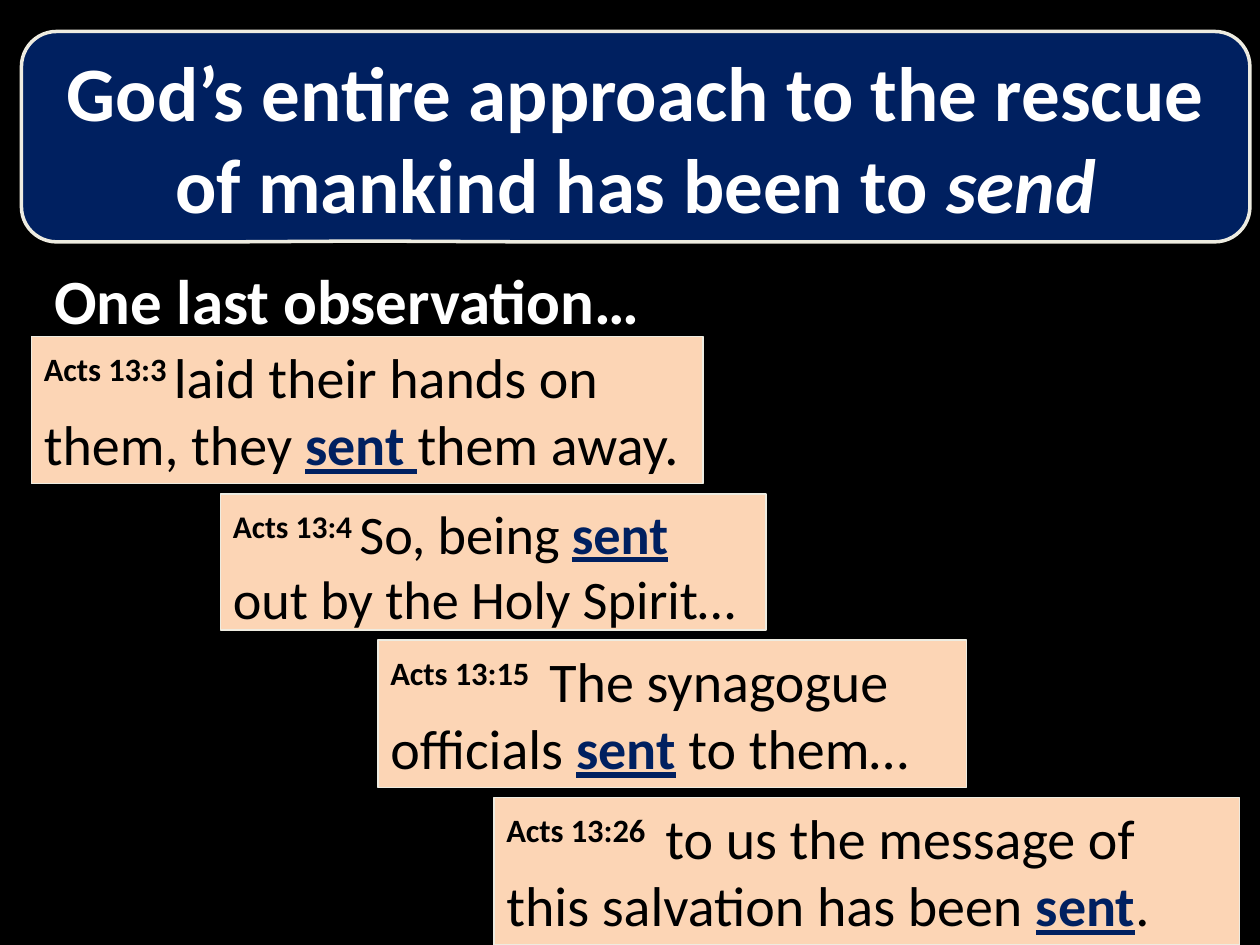
from pptx import Presentation
from pptx.dml.color import RGBColor
from pptx.enum.shapes import MSO_SHAPE as Shape
from pptx.enum.text import MSO_ANCHOR as Anchor, PP_ALIGN as Align
from pptx.util import Inches, Pt

WHITE, BLACK, NAVY = "FFFFFF", "000000", "002060"
PEACH, CREAM = "FCD5B5", "EEECE1"

# Left, top, width, height, text size, reference, words before, sent, words after
VERSES = [
    (3.92, 6.33, 5.92, 1.17, 32, "Acts 13:26 ",
     " to us the message of this salvation has been ", "sent", ". "),
    (0.25, 2.67, 5.33, 1.17, 32, "Acts 13:3 ",
     "laid their hands on them, they ", "sent ", "them away."),
    (1.75, 3.92, 4.33, 1.08, 31, "Acts 13:4 ",
     "So, being ", "sent", " out by the Holy Spirit…"),
    (3, 5.08, 4.67, 1.17, 32, "Acts 13:15 ",
     " The synagogue officials ", "sent", " to them… "),
]


def color(value):
    return RGBColor.from_string(value)


def add_box(page, kind, left, top, width, height, fill=None, line_width=None):
    box = page.shapes.add_shape(
        kind, Inches(left), Inches(top), Inches(width), Inches(height))
    box.shadow.inherit = False
    if fill:
        box.fill.solid()
        box.fill.fore_color.rgb = color(fill)
    else:
        box.fill.background()
    if line_width:
        box.line.color.rgb = color(CREAM)
        box.line.width = Pt(line_width)
    else:
        box.line.fill.background()
    box.text_frame.word_wrap = True
    return box


def add_span(para, text, size, text_color, bold=False):
    span = para.add_run()
    span.text = text
    span.font.name = "Calibri"
    span.font.size = Pt(size)
    span.font.bold = bold
    span.font.color.rgb = color(text_color)
    return span


def add_callout(page, left, top, width, height, text, size, **style):
    box = add_box(page, Shape.ROUNDED_RECTANGULAR_CALLOUT,
                  left, top, width, height, **style)
    for index, value in enumerate((-0.219, 0.496, 0.167)):
        box.adjustments[index] = value
    box.text_frame.vertical_anchor = Anchor.MIDDLE
    para = box.text_frame.paragraphs[0]
    para.alignment = Align.CENTER
    add_span(para, text, size, WHITE, bold=True)
    return para


def add_verse(page, left, top, width, height, size, reference, before, sent, after):
    box = add_box(page, Shape.RECTANGLE, left, top, width, height, PEACH, 0.75)
    box.text_frame.vertical_anchor = Anchor.TOP
    para = box.text_frame.paragraphs[0]
    para.alignment = Align.LEFT
    raised = add_span(para, reference, size, BLACK, bold=True)
    raised.font._element.set("baseline", "30000")
    add_span(para, before, size, BLACK)
    add_span(para, sent, size, NAVY, bold=True).font.underline = True
    add_span(para, after, size, BLACK)


def main():
    deck = Presentation()
    deck.slide_width, deck.slide_height = Inches(10), Inches(7.5)
    page = deck.slides.add_slide(deck.slide_layouts[6])
    page.background.fill.solid()
    page.background.fill.fore_color.rgb = color(BLACK)

    # Subheading, then the title banner
    add_callout(page, 0.17, 1.75, 5.17, 1.25, "One last observation…", 36)
    title = add_callout(
        page, 0.17, 0.25, 9.75, 1.67,
        "God’s entire approach to the rescue of mankind has been to ", 44,
        fill=NAVY, line_width=2)
    add_span(title, "send", 44, WHITE, bold=True).font.italic = True

    # Staircase of verses
    for verse in VERSES:
        add_verse(page, *verse)

    deck.save("out.pptx")


if __name__ == "__main__":
    main()
